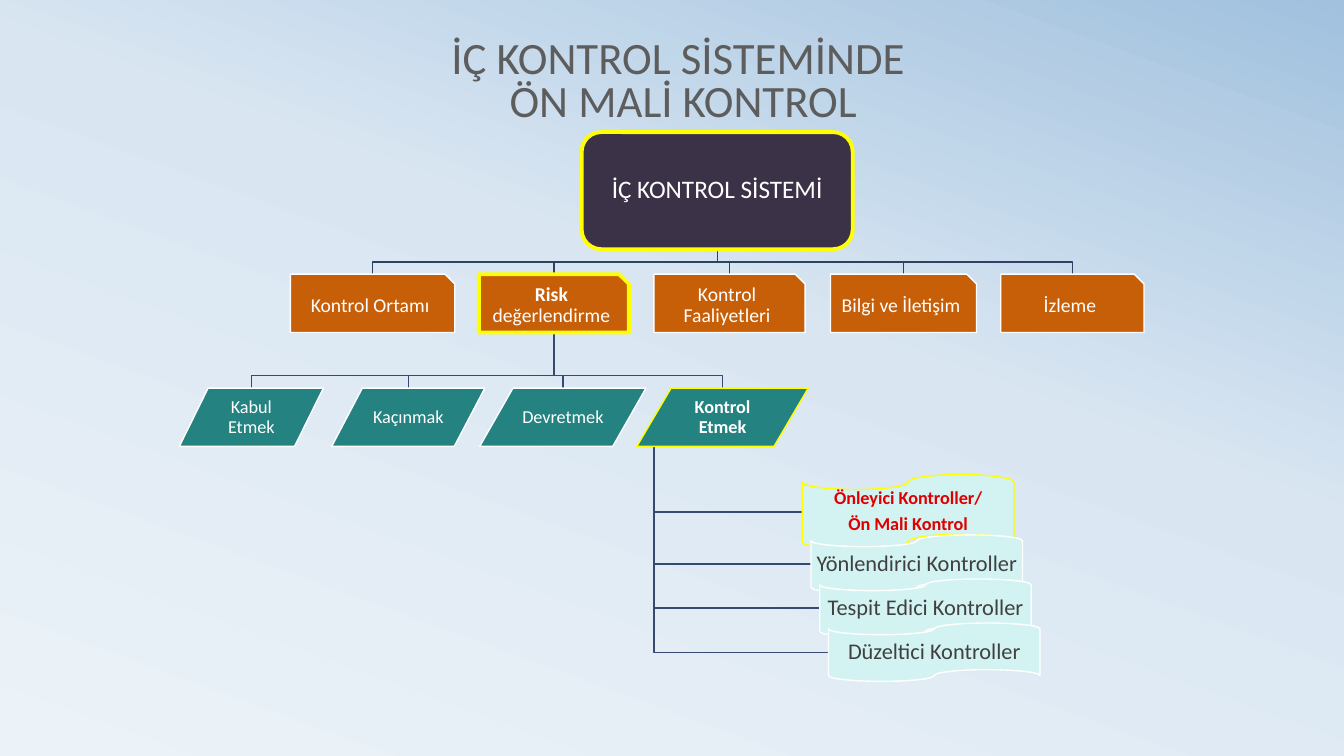
import copy
from collections import namedtuple

import pptx
import pptx.dml.color
import pptx.enum.shapes
import pptx.enum.text
import pptx.oxml.ns
import pptx.util

Cm, Pt = pptx.util.Cm, pptx.util.Pt
Preset = pptx.enum.shapes.MSO_SHAPE
Anchor = pptx.enum.text.MSO_ANCHOR
Level = namedtuple("Level", "preset fill size color")
Box = namedtuple("Box", "left top width height")

# Content: each box is (paragraphs, highlighted, left, width); a paragraph lists (text, bold) runs
TITLE = "İÇ KONTROL SİSTEMİNDE\v ÖN MALİ KONTROL"
SYSTEM = ([[("İÇ KONTROL SİSTEMİ", False)]], True, 14.66, 6.83)
COMPONENTS = [
    ([[("Kontrol Ortamı", False)]], False, 7.32, 4.14),
    ([[("Risk ", True), ("değerlendirme", False)]], True, 12.07, 3.78),
    ([[("Kontrol Faaliyetleri", False)]], False, 16.48, 3.81),
    ([[("Bilgi ve İletişim", False)]], False, 20.93, 3.68),
    ([[("İzleme", False)]], False, 25.22, 3.61),
]
RESPONSES = [
    ([[("Kabul Etmek", False)]], False, 4.52, 3.63),
    ([[("Kaçınmak", False)]], False, 8.36, 3.86),
    ([[("Devretmek", False)]], False, 12.09, 4.19),
    ([[("Kontrol Etmek", True)]], True, 16.05, 4.32),
]
CONTROLS = [
    ([[("Önleyici Kontroller/", True)], [("Ön Mali Kontrol", True)]], True),
    ([[("Yönlendirici Kontroller", False)]], False),
    ([[("Tespit Edici Kontroller", False)]], False),
    ([[("Düzeltici Kontroller", False)]], False),
]

THEME = {
    "font": "Calibri",
    "title": ("5D5D5D", 32),
    "background": [(0, "ECF3F8"), (0.58, "D9E6F2"), (1, "A1C1DE")],
    "system": Level(Preset.ROUNDED_RECTANGLE, "3C3247", 18, "FFFFFF"),
    "component": Level(Preset.SNIP_1_RECTANGLE, "C75F09", 14, "FFFFFF"),
    "response": Level(Preset.FLOWCHART_DATA, "248280", 13, "FFFFFF"),
    "control": Level(Preset.FLOWCHART_PUNCHED_TAPE, "D2F3F2", 16, "404040"),
    "key control": Level(Preset.FLOWCHART_PUNCHED_TAPE, "D2F3F2", 13, "DE0000"),
    "outline": "FFFFFF",
    "highlight": "FFFF00",
    "thin": 1,
    "thick": 2.75,
    "upper line": "2E4263",
    "lower line": "344A70",
}

# Layout in centimetres
TITLE_BOX = Box(6.12, 1.73, 21.95, 1.57)
SYSTEM_TOP, SYSTEM_HEIGHT = 3.33, 2.95
COMPONENT_TOP, RESPONSE_TOP, ROW_HEIGHT = 6.91, 9.78, 1.47
BUS_RISE = 0.31
CONTROL_LEFT, CONTROL_TOP, CONTROL_WIDTH = 20.22, 11.96, 5.33
KEY_CONTROL_HEIGHT, CONTROL_SHIFT, CONTROL_OVERLAP = 1.88, 0.22, 0.36
INSET = 0.03


def rgb(color):
    return pptx.dml.color.RGBColor.from_string(color)


def row_boxes(items, top, height):
    return [Box(left, top, width, height) for _, _, left, width in items]


def control_boxes():
    boxes, top = [], CONTROL_TOP
    for index, (_, key) in enumerate(CONTROLS):
        height = KEY_CONTROL_HEIGHT if key else ROW_HEIGHT
        left = CONTROL_LEFT + index * CONTROL_SHIFT
        boxes.append(Box(left, top, CONTROL_WIDTH, height))
        top += height - CONTROL_OVERLAP
    return boxes


def center(box):
    return box.left + box.width / 2


def paint_background(slide):
    fill = slide.background.fill
    fill.gradient()
    fill.gradient_angle = 70
    stops = slide.element.find(".//" + pptx.oxml.ns.qn("a:gsLst"))
    stops.insert(1, copy.deepcopy(stops[0]))
    for stop, (position, color) in zip(fill.gradient_stops, THEME["background"]):
        stop.position = position
        stop.color.rgb = rgb(color)


def add_title(slide):
    color, size = THEME["title"]
    frame = slide.shapes.add_textbox(*map(Cm, TITLE_BOX)).text_frame
    frame.word_wrap = True
    frame.vertical_anchor = Anchor.BOTTOM
    paragraph = frame.paragraphs[0]
    paragraph.text = TITLE
    style_paragraph(paragraph, size, color, 0.8)


def style_paragraph(paragraph, size, color, spacing):
    paragraph.alignment = pptx.enum.text.PP_ALIGN.CENTER
    paragraph.line_spacing = spacing
    paragraph.font.name = THEME["font"]
    paragraph.font.size = Pt(size)
    paragraph.font.color.rgb = rgb(color)


def add_line(slide, points, color):
    start, *rest = [(Cm(x), Cm(y)) for x, y in points]
    builder = slide.shapes.build_freeform(*start)
    builder.add_line_segments(rest, close=False)
    shape = builder.convert_to_shape()
    shape.shadow.inherit = False
    shape.fill.background()
    shape.line.color.rgb = rgb(color)
    shape.line.width = Pt(THEME["thin"])


def join_row(slide, parent, children, color):
    x, y = center(parent), parent.top + parent.height
    for child in children:
        bus, end = child.top - BUS_RISE, center(child)
        add_line(slide, [(x, y), (x, bus), (end, bus), (end, child.top)], color)


def join_stack(slide, parent, children, color):
    x, y = parent.left + parent.width / 10, parent.top + parent.height
    for child in children:
        middle = child.top + child.height / 2
        add_line(slide, [(x, y), (x, middle), (child.left, middle)], color)


def add_box(slide, box, level, paragraphs, highlighted, width):
    shape = slide.shapes.add_shape(level.preset, *map(Cm, box))
    shape.shadow.inherit = False
    shape.fill.solid()
    shape.fill.fore_color.rgb = rgb(level.fill)
    shape.line.color.rgb = rgb(THEME["highlight" if highlighted else "outline"])
    shape.line.width = Pt(width)
    frame = shape.text_frame
    frame.word_wrap = True
    frame.vertical_anchor = Anchor.MIDDLE
    frame.margin_left = frame.margin_right = Cm(INSET)
    frame.margin_top = frame.margin_bottom = Cm(INSET)
    for index, runs in enumerate(paragraphs):
        paragraph = frame.add_paragraph() if index else frame.paragraphs[0]
        style_paragraph(paragraph, level.size, level.color, 0.9)
        if index < len(paragraphs) - 1:
            paragraph.space_after = Pt(level.size * 0.35)
        for text, bold in runs:
            run = paragraph.add_run()
            run.text = text
            run.font.bold = bold


def main():
    presentation = pptx.Presentation()
    presentation.slide_width, presentation.slide_height = Cm(33.87), Cm(19.05)
    slide = presentation.slides.add_slide(presentation.slide_layouts[6])
    paint_background(slide)
    add_title(slide)

    system, = row_boxes([SYSTEM], SYSTEM_TOP, SYSTEM_HEIGHT)
    components = row_boxes(COMPONENTS, COMPONENT_TOP, ROW_HEIGHT)
    responses = row_boxes(RESPONSES, RESPONSE_TOP, ROW_HEIGHT)
    controls = control_boxes()

    # Connecting lines, behind the boxes
    join_row(slide, system, components, THEME["upper line"])
    join_row(slide, components[1], responses, THEME["lower line"])
    join_stack(slide, responses[-1], controls, THEME["lower line"])

    # Boxes of the three upper levels
    for name, items, boxes, emphasis in [
        ("system", [SYSTEM], [system], THEME["thick"]),
        ("component", COMPONENTS, components, THEME["thick"]),
        ("response", RESPONSES, responses, THEME["thin"]),
    ]:
        for (paragraphs, highlighted, *_), box in zip(items, boxes):
            width = emphasis if highlighted else THEME["thin"]
            add_box(slide, box, THEME[name], paragraphs, highlighted, width)

    # Stack of control types
    for (paragraphs, key), box in zip(CONTROLS, controls):
        level = THEME["key control" if key else "control"]
        add_box(slide, box, level, paragraphs, key, THEME["thin"])

    presentation.save("out.pptx")


if __name__ == "__main__":
    main()
